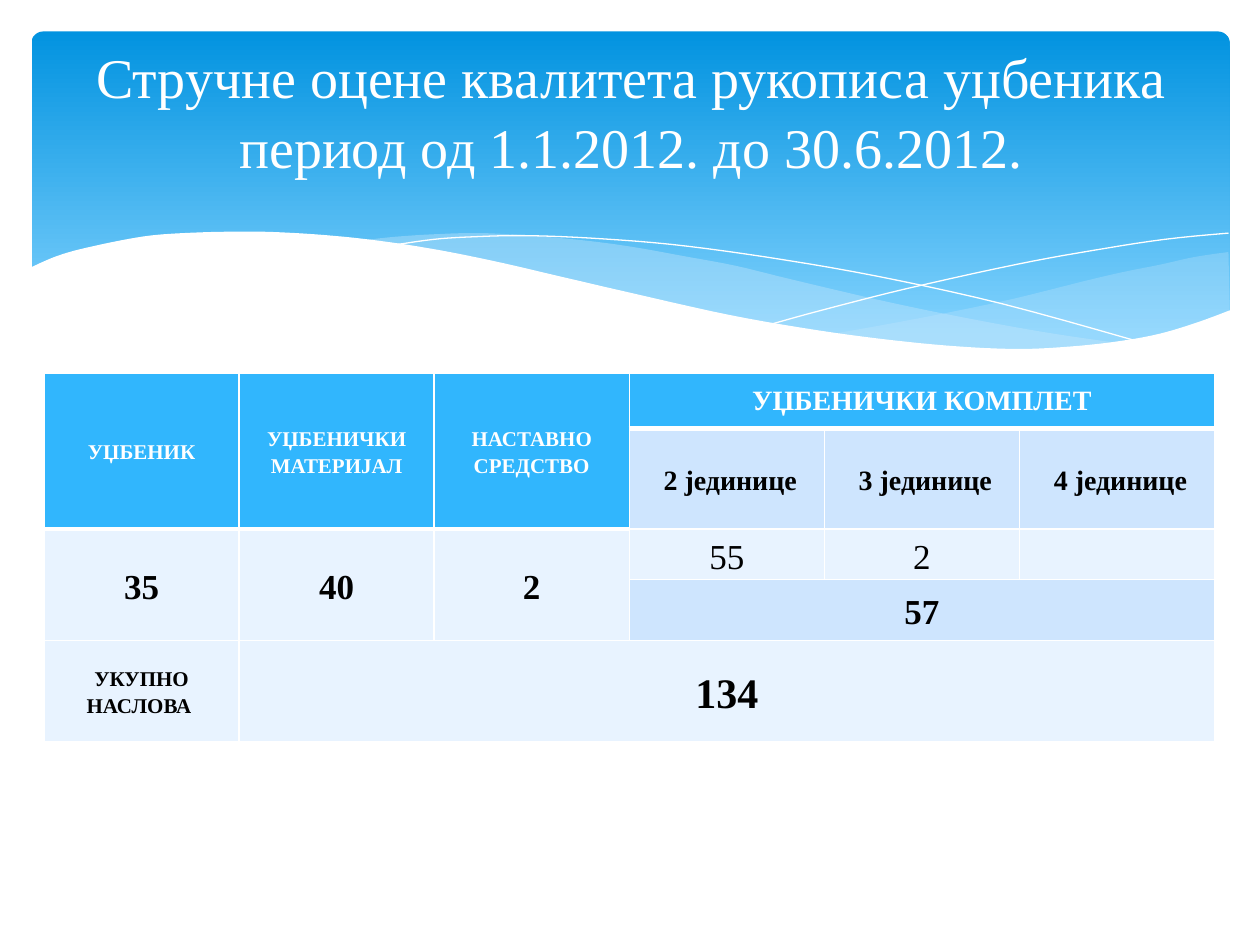
from dataclasses import dataclass

from lxml import etree
from pptx import Presentation
from pptx.dml.color import RGBColor
from pptx.enum.shapes import MSO_SHAPE
from pptx.enum.text import MSO_ANCHOR, PP_ALIGN
from pptx.oxml.ns import qn
from pptx.util import Inches, Pt

ROUND = MSO_SHAPE.ROUNDED_RECTANGLE
MIDDLE = MSO_ANCHOR.MIDDLE
CENTER = PP_ALIGN.CENTER


@dataclass(frozen=True)
class Theme:
    """Colours, font and type sizes of the slide."""
    font: str = "Times New Roman"
    white: str = "FFFFFF"
    black: str = "000000"
    deep: str = "0293E0"
    sky: str = "83D3FE"
    mist: str = "C6E7FC"
    head: str = "31B6FD"
    mid: str = "CEE5FE"
    pale: str = "E8F3FF"
    title: int = 32
    total: int = 24
    count: int = 20
    group: int = 16
    label: int = 12


THEME = Theme()

FOGS = [
    (29, [(9.5, 1.75), (9.23, 1.79), (8.96, 1.85), (8.66, 1.91), (8.36, 1.98),
          (7.8, 2.12), (7.28, 2.23), (6.81, 2.32), (6.36, 2.4)],
     [(6.36, 2.4), (6.8, 2.46), (7.2, 2.5), (7.56, 2.52), (7.89, 2.53),
      (8.19, 2.52), (8.47, 2.49), (8.72, 2.45), (8.96, 2.4), (9.17, 2.34),
      (9.51, 2.22)]),
    (40, [(8.68, 2.48), (8.12, 2.4), (7.5, 2.29), (6.81, 2.15), (6.04, 1.97),
          (5.59, 1.86), (5.16, 1.78), (4.77, 1.71), (4.4, 1.66), (3.95, 1.62),
          (3.55, 1.6), (3.19, 1.61), (2.88, 1.63), (2.61, 1.66)],
     [(2.61, 1.66), (3.17, 1.74), (3.79, 1.86), (4.24, 1.97), (5.05, 2.15),
      (5.76, 2.3), (6.4, 2.41), (6.97, 2.49), (7.48, 2.52), (7.93, 2.53),
      (8.32, 2.52), (8.68, 2.48)]),
]
THREADS = [
    [(2.84, 1.7), (3.19, 1.65), (3.49, 1.63), (3.91, 1.62), (4.44, 1.64),
     (5.08, 1.69), (5.83, 1.79), (6.7, 1.94), (7.7, 2.16), (8.82, 2.47)],
    [(5.88, 2.32), (6.28, 2.21), (6.95, 2.04), (7.81, 1.85), (8.41, 1.74),
     (8.99, 1.65), (9.5, 1.6)],
]
CREST = [
    (9.52, 2.21), (9.25, 2.31), (8.95, 2.4), (8.62, 2.46), (8.25, 2.5),
    (7.84, 2.52), (7.36, 2.5), (6.83, 2.45), (6.23, 2.37), (5.54, 2.25),
    (4.78, 2.08), (4.22, 1.95), (3.66, 1.82), (3.15, 1.72), (2.67, 1.65),
    (2.25, 1.61), (1.86, 1.59), (1.52, 1.59), (1.21, 1.6), (0.94, 1.62),
    (0.7, 1.66), (0.51, 1.7), (0.34, 1.74), (0.21, 1.78), (0.11, 1.82),
    (-0.02, 1.88)]
FLOOR = [(-0.02, 3.04), (9.52, 3.04)]

HEAD = {"fill": THEME.head, "color": THEME.white, "size": THEME.label}
UNIT = {"fill": THEME.mid, "size": THEME.group}
COUNT = {"size": THEME.count}
CELLS = [
    (0, 0, 2, 1, "УЏБЕНИК", HEAD),
    (0, 1, 2, 1, "УЏБЕНИЧКИ МАТЕРИЈАЛ", HEAD),
    (0, 2, 2, 1, "НАСТАВНО СРЕДСТВО", HEAD),
    (0, 3, 1, 3, "УЏБЕНИЧКИ КОМПЛЕТ",
     {**HEAD, "size": THEME.group, "pad": 0.05, "lead": 1.0}),
    (1, 3, 1, 1, " 2 јединице", UNIT),
    (1, 4, 1, 1, " 3 јединице", UNIT),
    (1, 5, 1, 1, " 4 јединице", UNIT),
    (2, 0, 2, 1, "35", COUNT),
    (2, 1, 2, 1, "40", COUNT),
    (2, 2, 2, 1, "2", COUNT),
    (2, 3, 1, 1, "55", {**COUNT, "bold": False}),
    (2, 4, 1, 1, "2", {**COUNT, "bold": False}),
    (2, 5, 1, 1, "", COUNT),
    (3, 3, 1, 3, "57", {**COUNT, "fill": THEME.mid, "pad": 0.05}),
    (4, 0, 1, 1, "УКУПНО\nНАСЛОВА ", {"size": THEME.label, "pad": 0.05}),
    (4, 1, 1, 5, "134", {"size": THEME.total, "pad": 0.05}),
]
ROWS = [0.44, 0.8, 0.4, 0.4, 0.8]


def apply(item, form):
    """Set each value of a format dict on an object."""
    for name, value in form.items():
        setattr(item, name, value)


def paint(fill, color):
    """Give a fill one solid colour."""
    fill.solid()
    fill.fore_color.rgb = RGBColor.from_string(color)


def write(frame, text, color, size, bold, lead):
    """Write centred paragraphs into a text frame."""
    frame.text = text
    for para in frame.paragraphs:
        apply(para, {"alignment": CENTER, "line_spacing": lead})
        for run in para.runs:
            apply(run.font, {"name": THEME.font, "size": Pt(size), "bold": bold})
            run.font.color.rgb = RGBColor.from_string(color)


def smooth(knots, steps=5):
    """Return points on a Catmull-Rom curve through the knots."""
    ends = [knots[0], *knots, knots[-1]]
    curve = [knots[0]]
    for a, b, c, d in zip(ends, ends[1:], ends[2:], ends[3:]):
        for step in range(1, steps + 1):
            t = step / steps
            curve.append(tuple(
                q + t * (r - p) / 2 + t * t * (2 * p - 5 * q + 4 * r - s) / 2
                + t ** 3 * (3 * q - p - 3 * r + s) / 2
                for p, q, r, s in zip(a, b, c, d)))
    return curve


def draw(slide, box, points, close=True):
    """Build a freeform from points relative to a box."""
    spots = [(Inches(box[0] + x), Inches(box[1] + y)) for x, y in points]
    pen = slide.shapes.build_freeform(*spots[0], scale=1.0)
    pen.add_line_segments(spots[1:], close=close)
    shape = pen.convert_to_shape()
    shape.shadow.inherit = False
    return shape


def add_banner(slide, box):
    """Place the gradient banner with its fog, threads and white wave."""
    back = slide.shapes.add_shape(ROUND, *map(Inches, box))
    back.shadow.inherit = False
    back.adjustments[0] = 0.034
    back.line.fill.background()
    back.fill.gradient()
    back.fill.gradient_angle = 270
    stops = zip(back.fill.gradient_stops, (THEME.deep, THEME.sky), (0, 0.9))
    for stop, color, place in stops:
        stop.color.rgb = RGBColor.from_string(color)
        stop.position = place
    for alpha, top, base in FOGS:
        fog = draw(slide, box, smooth(top) + smooth(base))
        paint(fog.fill, THEME.mist)
        fog.line.fill.background()
        tint = fog.fill._xPr.find(qn("a:solidFill"))[0]
        etree.SubElement(tint, qn("a:alpha"), val=str(alpha * 1000))
    for knots in THREADS:
        thread = draw(slide, box, smooth(knots), close=False)
        thread.fill.background()
        paint(thread.line.fill, THEME.white)
        thread.line.width = Pt(0)
    wave = draw(slide, box, smooth(CREST) + FLOOR)
    paint(wave.fill, THEME.white)
    wave.line.fill.background()


def add_title(slide, box):
    """Place the two-line title in the upper part of the banner."""
    frame = slide.shapes.add_textbox(*map(Inches, box)).text_frame
    apply(frame, {"word_wrap": True, "vertical_anchor": MIDDLE,
                  "margin_bottom": Inches(0.53)})
    text = "Стручне оцене квалитета рукописа уџбеника\vпериод од 1.1.2012. до 30.6.2012."
    write(frame, text, THEME.white, THEME.title, False, 1.05)


def edge(cell, sides):
    """Draw white borders of the given widths on a cell."""
    props = cell._tc.get_or_add_tcPr()
    for place, (side, width) in enumerate(sides.items()):
        line = etree.Element(qn(f"a:ln{side}"), w=str(Pt(width)))
        fill = etree.SubElement(line, qn("a:solidFill"))
        etree.SubElement(fill, qn("a:srgbClr"), val=THEME.white)
        props.insert(place, line)


def add_grid(slide, box):
    """Place the table of reviewed textbooks."""
    table = slide.shapes.add_table(len(ROWS), 6, *map(Inches, box)).table
    apply(table, {"first_row": False, "horz_banding": False})
    for row, high in zip(table.rows, ROWS):
        row.height = Inches(high)
    for col in table.columns:
        col.width = Inches(box[2] / 6)
    for r in range(len(ROWS)):
        for c in range(6):
            heavy = r == 0 or (r == 1 and c < 3)
            top = {"T": 1} if r == 0 else {}
            edge(table.cell(r, c), {"L": 1, "R": 1, **top, "B": 3 if heavy else 1})
    base = {"fill": THEME.pale, "color": THEME.black, "bold": True,
            "lead": 1.15, "pad": 0}
    for r, c, tall, wide, text, form in CELLS:
        look = {**base, **form}
        cell = table.cell(r, c)
        if tall * wide > 1:
            cell.merge(table.cell(r + tall - 1, c + wide - 1))
        paint(cell.fill, look["fill"])
        pad, side = Inches(look["pad"]), Inches(0.1 if look["pad"] else 0.07)
        apply(cell, {"vertical_anchor": MIDDLE, "margin_top": pad,
                     "margin_bottom": pad, "margin_left": side,
                     "margin_right": side})
        write(cell.text_frame, text, look["color"], look["size"],
              look["bold"], look["lead"])


def main():
    """Build the slide and save it."""
    deck = Presentation()
    apply(deck, {"slide_width": Inches(10), "slide_height": Inches(7.5)})
    slide = deck.slides.add_slide(deck.slide_layouts[6])
    add_banner(slide, (0.25, 0.25, 9.51, 2.7))
    add_title(slide, (0.51, 0.6, 9, 1.02))
    add_grid(slide, (0.35, 2.96, 9.29, sum(ROWS)))
    deck.save("out.pptx")


if __name__ == "__main__":
    main()
